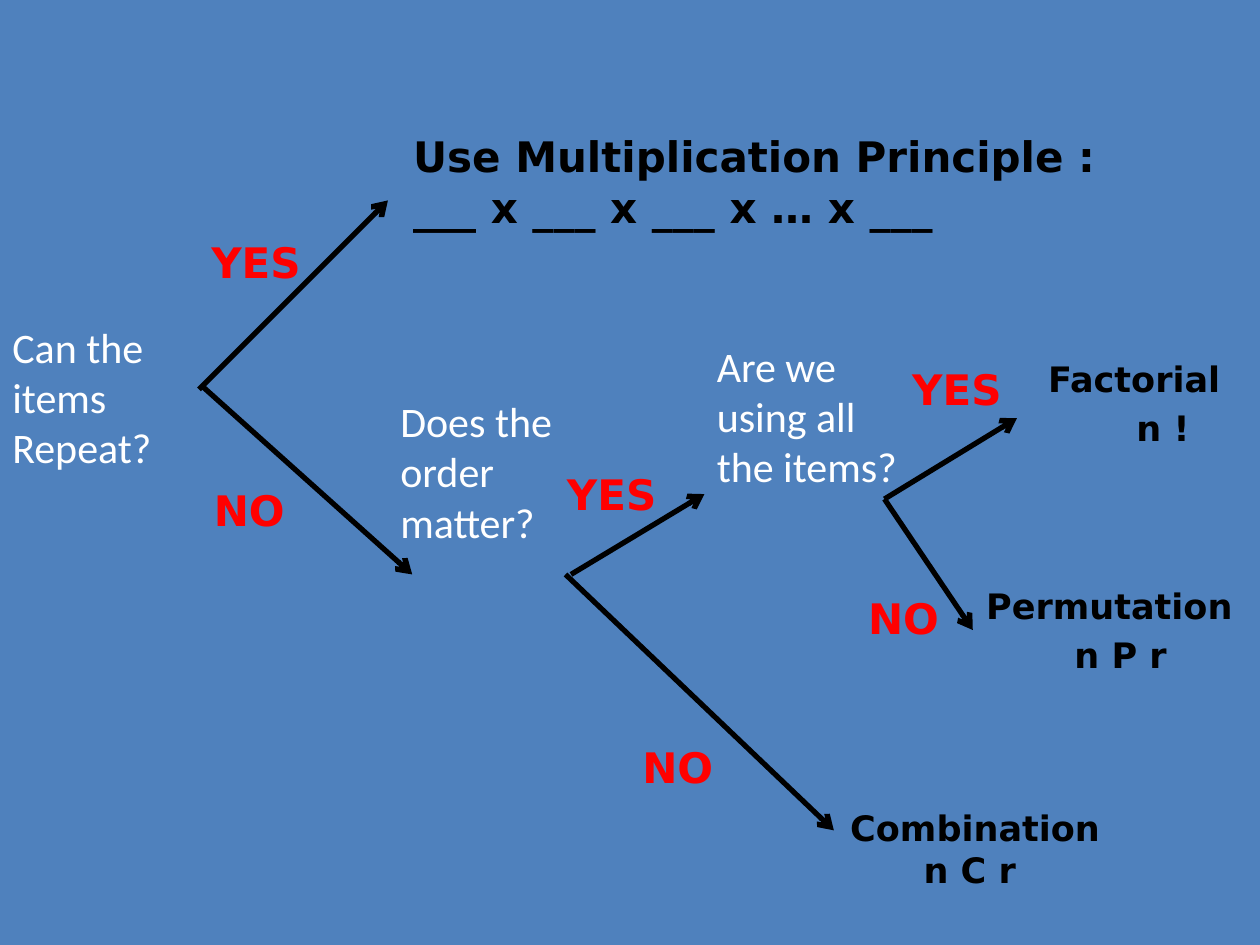
from lxml.etree import SubElement
from pptx import Presentation
from pptx.dml.color import RGBColor
from pptx.enum.shapes import MSO_CONNECTOR
from pptx.enum.text import MSO_AUTO_SIZE as AutoSize
from pptx.oxml.ns import qn
from pptx.util import Cm, Pt

BLUE = RGBColor(0x4F, 0x81, 0xBD)
WHITE = RGBColor(0xFF, 0xFF, 0xFF)
BLACK = RGBColor(0, 0, 0)
RED = RGBColor(0xFF, 0, 0)

QUESTIONS = [
    (["Can the items", "Repeat?"], 0, 6.35, 4.45),
    (["Does the order matter?"], 7.82, 7.85, 4.6),
    (["Are we using all the items?"], 14.2, 6.73, 4.6),
]
ANSWERS = [
    ("YES", 4.01, 4.65), ("NO", 4.06, 9.65),
    ("YES", 11.18, 9.32), ("NO", 12.7, 14.83),
    ("YES", 18.14, 7.21), ("NO", 17.25, 11.81),
]
BRANCHES = [
    (4.01, 7.85, 7.82, 4.04), (4.06, 7.77, 8.31, 11.58),
    (11.51, 11.58, 14.2, 9.96), (11.4, 11.58, 16.81, 16.74),
    (17.83, 10.06, 20.5, 8.43), (17.83, 10.06, 19.61, 12.7),
]
# name, formula, left, top, width, height, formula indent, formula gap in points
METHODS = [
    ("Factorial", "n !", 20.88, 7.09, 4.04, 2.13, 1.78, 4),
    ("Permutation", "n P r", 19.63, 11.66, 5.54, 2.13, 1.78, 4),
    ("Combination", "n C r", 16.89, 16.13, 7.19, 1.96, 1.48, 0),
]


def add_text(slide, lines, left, top, width, height, *, size=24,
             font="DejaVu Sans", color=BLACK, bold=True):
    """Add a text box with one paragraph per line and return its paragraphs."""
    box = slide.shapes.add_textbox(Cm(left), Cm(top), Cm(width), Cm(height))
    frame = box.text_frame
    frame.word_wrap = True
    frame.auto_size = AutoSize.SHAPE_TO_FIT_TEXT
    for index, line in enumerate(lines):
        para = frame.add_paragraph() if index else frame.paragraphs[0]
        span = para.add_run()
        span.text = line
        span.font.name = font
        span.font.size = Pt(size)
        span.font.bold = bold
        span.font.color.rgb = color
    return frame.paragraphs


def add_method(slide, name, formula, left, top, width, height, indent, gap):
    paras = add_text(slide, [name, formula], left, top, width, height, size=20)
    paras[1].space_before = Pt(gap)
    properties = paras[1]._p.get_or_add_pPr()
    properties.set("marL", str(Cm(indent)))
    properties.set("indent", "0")


def add_arrow(slide, *ends):
    arrow = slide.shapes.add_connector(MSO_CONNECTOR.STRAIGHT, *map(Cm, ends))
    arrow.line.color.rgb = BLACK
    arrow.line.width = Pt(3)
    SubElement(arrow.line._get_or_add_ln(), qn("a:tailEnd"), type="arrow")
    SubElement(arrow._element.spPr, qn("a:effectLst"))


def main():
    deck = Presentation()
    deck.slide_width, deck.slide_height = Cm(25.4), Cm(19.05)
    page = deck.slides.add_slide(deck.slide_layouts[6])
    page.background.fill.solid()
    page.background.fill.fore_color.rgb = BLUE

    for branch in BRANCHES:
        add_arrow(page, *branch)
    for lines, left, top, width in QUESTIONS:
        add_text(page, lines, left, top, width, 3.33,
                 font="Calibri", color=WHITE, bold=False)
    for answer, left, top in ANSWERS:
        add_text(page, [answer], left, top, 2.97, 1.3, color=RED)
    add_text(page, ["Use Multiplication Principle : ___ x ___ x ___ x … x ___"],
             8.08, 2.51, 14.83, 2.31)
    for method in METHODS:
        add_method(page, *method)

    deck.save("out.pptx")


if __name__ == "__main__":
    main()
